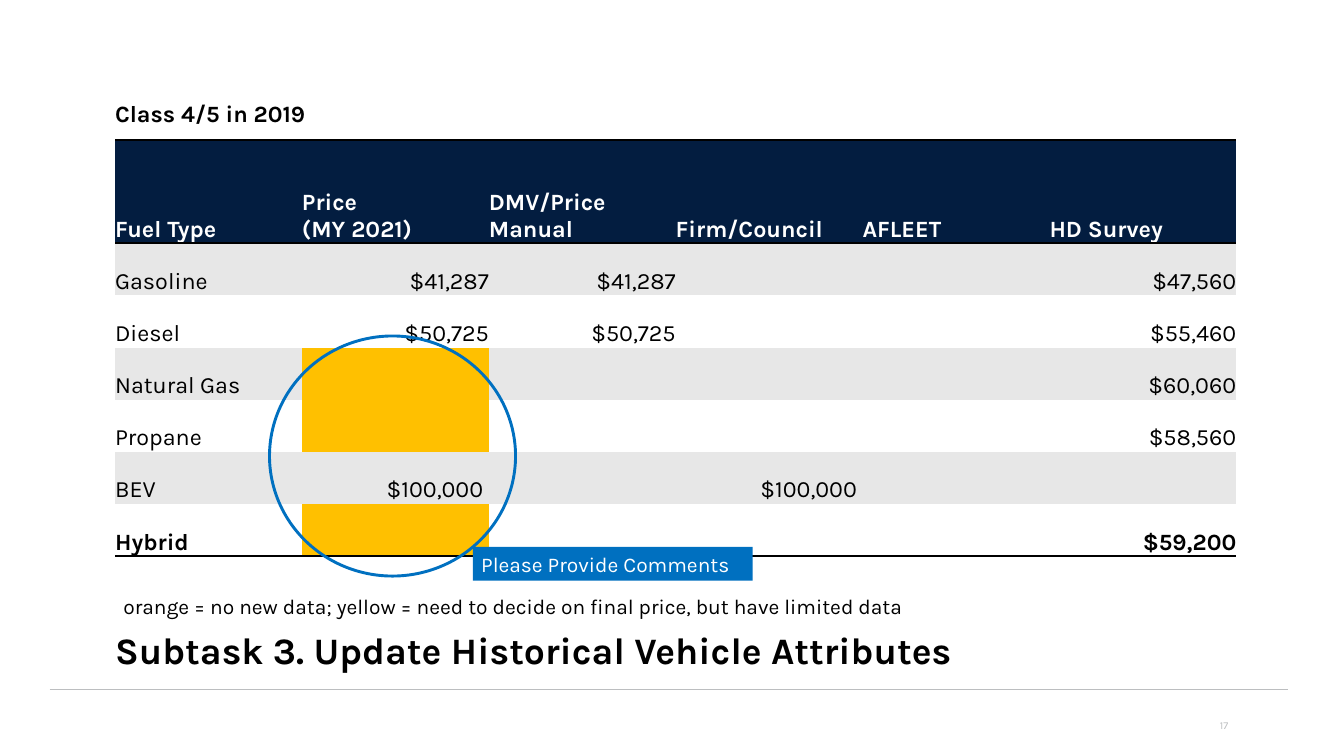
from dataclasses import dataclass

from lxml import etree
from pptx import Presentation
from pptx.dml.color import RGBColor
from pptx.enum.shapes import MSO_CONNECTOR, MSO_SHAPE
from pptx.enum.text import MSO_ANCHOR, MSO_AUTO_SIZE, PP_ALIGN
from pptx.oxml.ns import qn
from pptx.util import Cm, Pt

LEFT, RIGHT = PP_ALIGN.LEFT, PP_ALIGN.RIGHT
TOP, MIDDLE, BOTTOM = MSO_ANCHOR.TOP, MSO_ANCHOR.MIDDLE, MSO_ANCHOR.BOTTOM
NO_FIT = MSO_AUTO_SIZE.NONE
OVAL, RECT = MSO_SHAPE.OVAL, MSO_SHAPE.RECTANGLE
STRAIGHT = MSO_CONNECTOR.STRAIGHT
PLAIN = "{2D5ABB26-0587-4C30-8999-92F81FD0307C}"  # table style without grid


@dataclass(frozen=True)
class Theme:
    font: str = "Karla"
    black: str = "000000"
    white: str = "FFFFFF"
    navy: str = "031D40"
    band: str = "E7E7E7"
    orange: str = "FFC000"
    blue: str = "0070C0"
    gray: str = "BCBEC0"
    title: int = 32
    table: int = 20
    note: int = 18
    small: int = 9


THEME = Theme()
EDGE = 3.48

HEAD = ["Fuel Type", "Price\n(MY 2021)", "DMV/Price Manual",
        "Firm/Council", "AFLEET", "HD Survey"]
ROWS = [
    ["Gasoline", "$41,287", "$41,287", "", "", "$47,560"],
    ["Diesel", "$50,725", "$50,725", "", "", "$55,460"],
    ["Natural Gas", "", "", "", "", "$60,060"],
    ["Propane", "", "", "", "", "$58,560"],
    ["BEV", "$100,000 ", "", "$100,000 ", "", ""],
    ["Hybrid", "", "", "", "", "$59,200"],
]


def rgb(code):
    return RGBColor.from_string(code)


def paint(item, color):
    item.fill.solid()
    item.fill.fore_color.rgb = rgb(color)


def write(frame, text, size, color=THEME.black, bold=False, align=LEFT):
    """Write one paragraph for each line of text."""
    for i, line in enumerate(text.split("\n")):
        para = frame.add_paragraph() if i else frame.paragraphs[0]
        para.alignment = align
        run = para.add_run()
        run.text = line
        font = run.font
        font.name, font.size, font.bold = THEME.font, Pt(size), bold
        font.color.rgb = rgb(color)


def place(shape, left, top, width, height):
    shape.left, shape.top = Cm(left), Cm(top)
    shape.width, shape.height = Cm(width), Cm(height)


def fill_holder(shape, box, text, size, anchor, spacing):
    place(shape, *box)
    frame = shape.text_frame
    frame.margin_left = frame.margin_right = 0
    frame.word_wrap, frame.auto_size = True, NO_FIT
    frame.vertical_anchor = anchor
    para = frame.paragraphs[0]
    para.line_spacing, para.space_before = spacing, Pt(0)
    props = para._p.get_or_add_pPr()
    props.set("marL", "0")
    props.set("indent", "0")
    etree.SubElement(props, qn("a:buNone"))
    write(frame, text, size, bold=True)


def add_label(slide, box, text, size, color, align=LEFT, anchor=TOP):
    label = slide.shapes.add_textbox(*map(Cm, box))
    label.text_frame.word_wrap = True
    label.text_frame.vertical_anchor = anchor
    write(label.text_frame, text, size, color, align=align)


def add_form(slide, kind, box):
    form = slide.shapes.add_shape(kind, *map(Cm, box))
    form.shadow.inherit = False
    return form


def add_rule(slide, left, right, top):
    rule = slide.shapes.add_connector(
        STRAIGHT, Cm(left), Cm(top), Cm(right), Cm(top))
    rule.line.color.rgb = rgb(THEME.gray)
    rule.line.width = Pt(0.5)
    etree.SubElement(rule._element.spPr, qn("a:effectLst"))


def add_border(cell, sides):
    """Draw black borders; sides are in schema order, such as TB."""
    props = cell._tc.get_or_add_tcPr()
    for i, side in enumerate(sides):
        line = etree.Element(qn("a:ln" + side), w=str(Pt(2)))
        solid = etree.SubElement(line, qn("a:solidFill"))
        etree.SubElement(solid, qn("a:srgbClr"), val=THEME.black)
        props.insert(i, line)


def cell_fill(row, col):
    if row == 0:
        return THEME.navy
    if col == 1 and not ROWS[row - 1][col]:
        return THEME.orange
    return THEME.band if row % 2 else THEME.white


def add_prices(slide):
    data = [HEAD] + ROWS
    last = len(ROWS)
    frame = slide.shapes.add_table(
        len(data), len(HEAD), Cm(EDGE), Cm(4.24), Cm(33.91), Cm(12.57))
    table = frame.table
    table.horz_banding = False
    table._tbl.tblPr.find(qn("a:tableStyleId")).text = PLAIN
    for i, row in enumerate(table.rows):
        row.height = Cm(1.575 if i else 3.12)
    for i, texts in enumerate(data):
        for j, text in enumerate(texts):
            cell = table.cell(i, j)
            cell.margin_left = cell.margin_right = 0
            cell.margin_top = cell.margin_bottom = 0
            cell.vertical_anchor = BOTTOM
            paint(cell, cell_fill(i, j))
            add_border(cell, {0: "TB", last: "B"}.get(i, ""))
            if text:
                write(cell.text_frame, text, THEME.table,
                      THEME.black if i else THEME.white,
                      bold=i in (0, last),
                      align=RIGHT if i and j else LEFT)


def main():
    deck = Presentation()
    deck.slide_width, deck.slide_height = Cm(40.64), Cm(22.86)
    slide = deck.slides.add_slide(deck.slide_layouts[1])

    add_rule(slide, 1.5, 38.94, 20.83)
    fill_holder(slide.shapes.title, (EDGE, 17.73, 34.93, 2.74),
                "Subtask 3. Update Historical Vehicle Attributes",
                THEME.title, BOTTOM, 0.9)
    add_label(slide, (29.36, 21.31, 8.03, 1.22), "17", THEME.small,
              THEME.gray, RIGHT, MIDDLE)
    fill_holder(slide.placeholders[1], (EDGE, 2.79, 34.93, 14.3),
                "Class 4/5 in 2019", THEME.table, TOP, 1.1)
    add_prices(slide)
    add_label(slide, (EDGE, 17.81, 30.2, 1.02),
              "orange = no new data; yellow = need to decide on final price, "
              "but have limited data", THEME.note, THEME.black)

    ring = add_form(slide, OVAL, (8.15, 10.16, 7.44, 7.26))
    ring.fill.background()
    ring.line.color.rgb = rgb(THEME.blue)
    ring.line.width = Pt(2.5)

    call = add_form(slide, RECT, (14.3, 16.54, 8.46, 1.02))
    paint(call, THEME.blue)
    call.line.fill.background()
    write(call.text_frame, "Please Provide Comments", THEME.note, THEME.white)

    deck.save("out.pptx")


if __name__ == "__main__":
    main()
